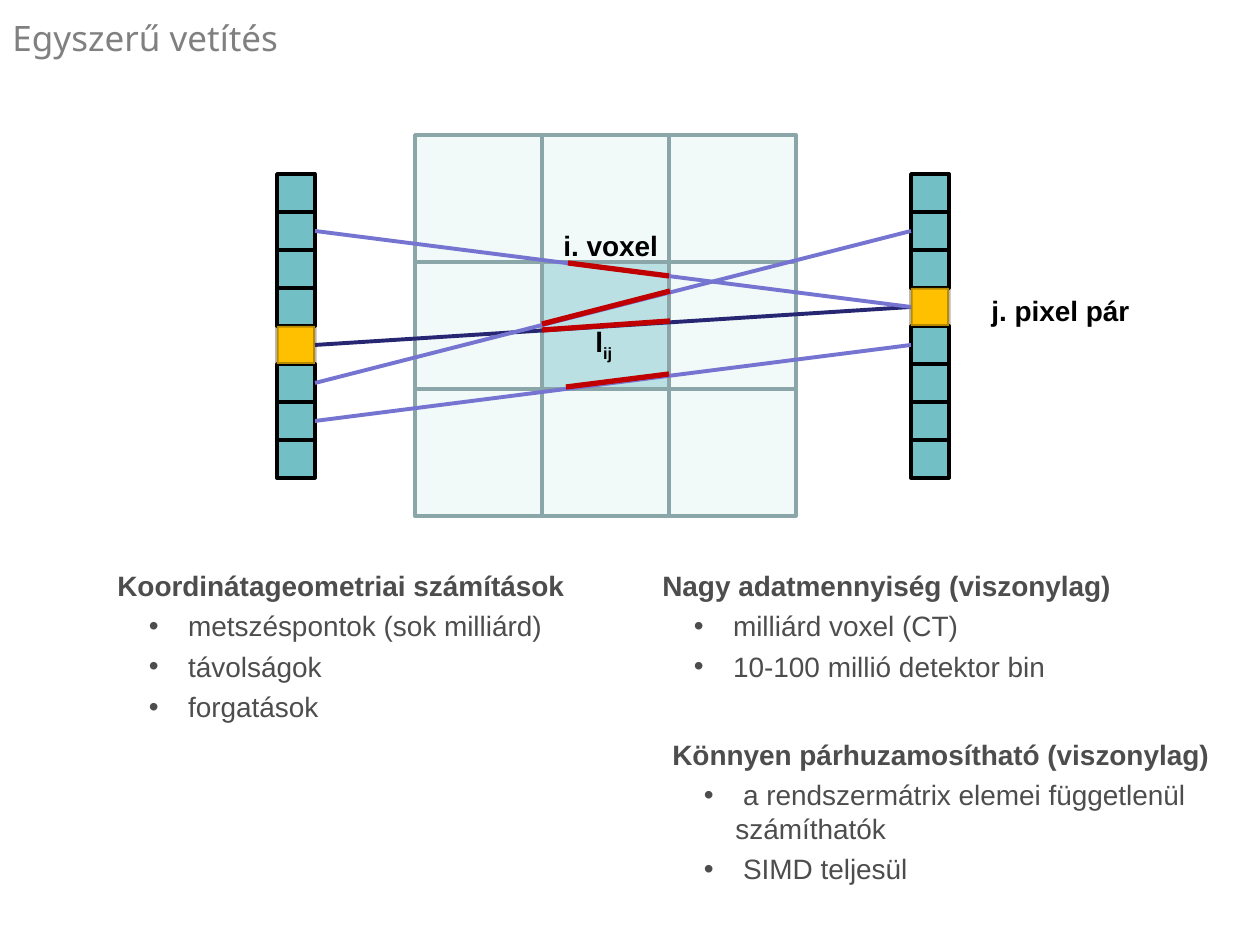
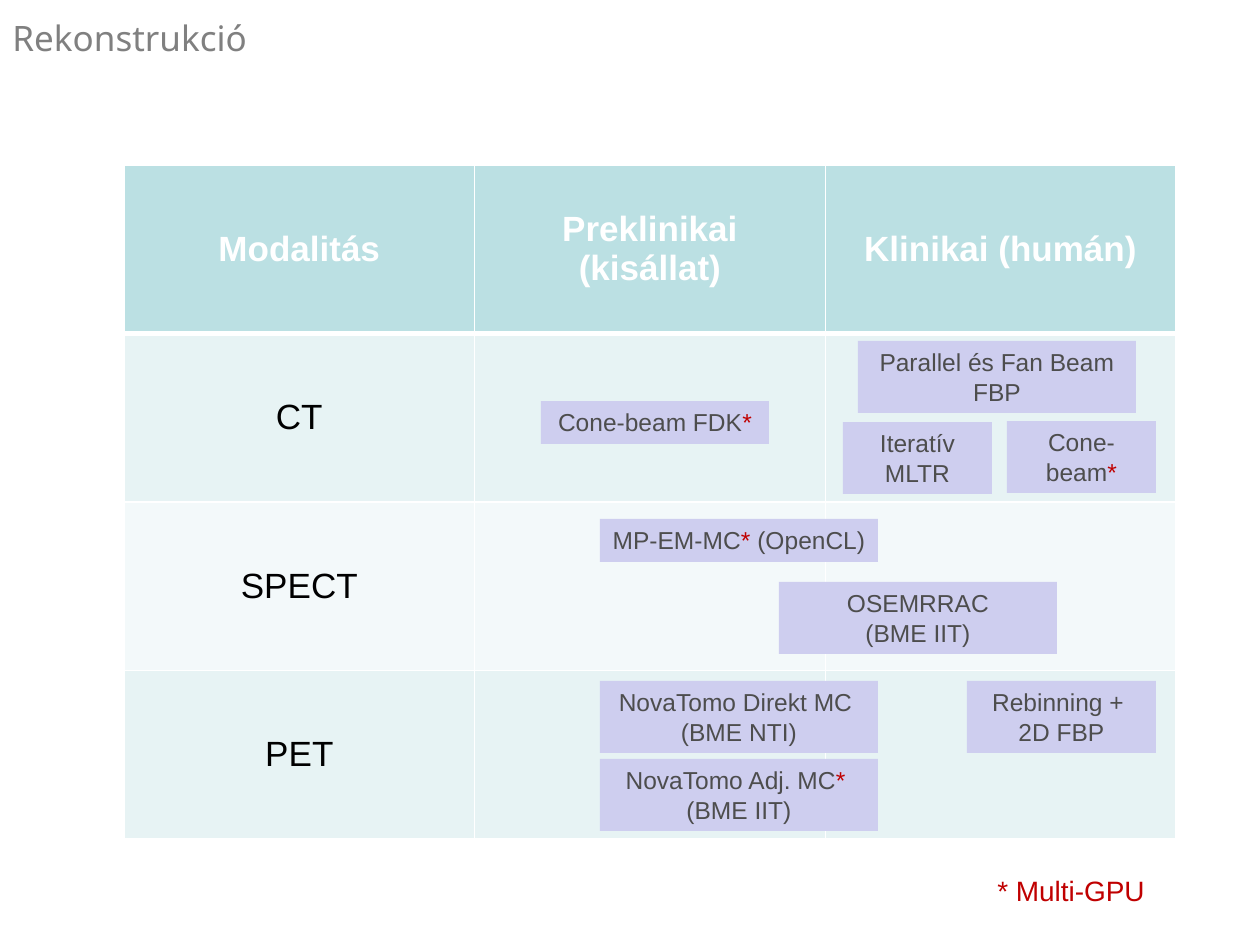
from lxml.etree import SubElement
from pptx import Presentation
from pptx.dml.color import RGBColor
from pptx.enum.shapes import MSO_CONNECTOR as Connector, MSO_SHAPE as Preset
from pptx.enum.text import MSO_ANCHOR as Anchor, MSO_AUTO_SIZE as AutoSize, PP_ALIGN as Align
from pptx.oxml.ns import qn
from pptx.util import Emu, Pt

COLORS = {
    "title": "808080", "text": "4D4D4D", "black": "000000", "white": "FFFFFF",
    "accent": "C00000", "chip": "CECEEF",
    "voxel": "F1F9F9", "active voxel": "BBE0E3", "voxel edge": "8AA6A8",
    "pixel": "72BFC5", "active pixel": "FFC000",
    "ray": "7575D1", "active ray": "262673",
    "header": "BBE0E3", "odd row": "E7F3F4", "even row": "F3F9FA",
}
FORMATS = {
    "title": {"name": "Noto Sans", "size": Pt(20)},
    "label": {"name": "Arial", "size": Pt(16), "bold": True},
    "body": {"name": "Arial", "size": Pt(16), "bold": False},
    "chip": {"name": "Arial", "size": Pt(14)},
    "header": {"name": "Arial", "size": Pt(20), "bold": True},
    "cell": {"name": "Arial", "size": Pt(20), "bold": False},
}
RIGHT_SIDE, LEFT_SIDE = 3, 1
VOXEL, PIXEL, PIXEL_COUNT = 127, 38, 8


def px(length):
    return Emu(round(length * 914400 / 126))


def rgb(color):
    return RGBColor.from_string(COLORS[color])


# Text
def add_span(para, text, style, color):
    span = para.add_run()
    span.text = text
    for name, value in FORMATS[style].items():
        setattr(span.font, name, value)
    span.font.color.rgb = rgb(color)
    return span


def add_starred(para, text, style, color):
    """Write text with line breaks, its stars in the accent colour."""
    for row, line in enumerate(text.split("\n")):
        if row:
            para.add_line_break()
        before, star, after = line.partition("*")
        for part, part_color in ((before, color), (star, "accent"), (after, color)):
            if part:
                add_span(para, part, style, part_color)


def add_box(page, left, top, width, height, wrap=True):
    box = page.shapes.add_textbox(px(left), px(top), px(width), px(height))
    box.text_frame.word_wrap = wrap
    return box.text_frame


def add_label(page, place, text, color="black", style="label", wrap=True):
    para = add_box(page, *place, wrap=wrap).paragraphs[0]
    add_span(para, text, style, color)
    return para


def add_bullet(para):
    para.level = 1
    props = para._p.get_or_add_pPr()
    props.set("marL", str(px(63)))
    props.set("indent", str(-px(63) // 2))
    SubElement(props, qn("a:buFont"), typeface="Arial")
    SubElement(props, qn("a:buChar"), char="•")


def add_list(page, place, heading, items):
    frame = add_box(page, *place)
    add_span(frame.paragraphs[0], heading, "label", "text")
    for item in items:
        para = frame.add_paragraph()
        para.space_before = Pt(4)
        add_bullet(para)
        add_span(para, " " + item, "body", "text")


def add_page(deck, title):
    page = deck.slides.add_slide(deck.slide_layouts[6])
    frame = add_box(page, 0, 0, 799, 76)
    frame.vertical_anchor = Anchor.MIDDLE
    add_span(frame.paragraphs[0], title, "title", "title")
    return page


# Shapes and lines
def add_rect(page, place, fill, edge=None):
    rect = page.shapes.add_shape(Preset.RECTANGLE, *map(px, place))
    rect.shadow.inherit = False
    rect.fill.solid()
    rect.fill.fore_color.rgb = rgb(fill)
    if edge:
        rect.line.color.rgb = rgb(edge)
        rect.line.width = Pt(2)
    else:
        rect.line.fill.background()
    return rect


def add_line(page, start, end, color, width):
    line = page.shapes.add_connector(Connector.STRAIGHT, *map(px, (*start, *end)))
    line.line.color.rgb = rgb(color)
    line.line.width = Pt(width)
    SubElement(line._element.spPr, qn("a:effectLst"))
    return line


def add_voxels(page, left, top):
    for row in range(3):
        for column in range(3):
            fill = "active voxel" if row == column == 1 else "voxel"
            place = (left + column * VOXEL, top + row * VOXEL, VOXEL, VOXEL)
            add_rect(page, place, fill, "voxel edge")


def add_detector(page, left, top, active):
    """Stack the pixels, with the active one on top of its neighbours."""
    pixels = {}
    for index in sorted(range(PIXEL_COUNT), key=lambda number: number == active):
        fill = "active pixel" if index == active else "pixel"
        place = (left, top + index * PIXEL, PIXEL, PIXEL)
        pixels[index] = add_rect(page, place, fill, "black")
    edge = pixels[active].line._get_or_add_ln().find(".//" + qn("a:srgbClr"))
    SubElement(edge, qn("a:alpha"), val="28000")
    return pixels


def add_ray(page, source, target, color):
    ray = add_line(page, (0, 0), (1, 1), color, 2.25)
    ray.begin_connect(source, RIGHT_SIDE)
    ray.end_connect(target, LEFT_SIDE)


def add_chip(page, place, text):
    chip = add_rect(page, place, "chip")
    frame = chip.text_frame
    frame.word_wrap = True
    frame.auto_size = AutoSize.SHAPE_TO_FIT_TEXT
    frame.vertical_anchor = Anchor.TOP
    para = frame.paragraphs[0]
    para.alignment = Align.CENTER
    add_starred(para, text, "chip", "text")


# Table
def set_borders(cell, row):
    props = cell._tc.get_or_add_tcPr()
    widths = {"lnL": 1, "lnR": 1, "lnT": 3 if row == 1 else 1, "lnB": 3 if row == 0 else 1}
    for side, width in widths.items():
        border = SubElement(props, qn("a:" + side), w=str(Pt(width)))
        fill = SubElement(border, qn("a:solidFill"))
        SubElement(fill, qn("a:srgbClr"), val=COLORS["white"])


def add_grid(page, place, rows):
    table = page.shapes.add_table(len(rows), len(rows[0]), *map(px, place)).table
    for row, texts in enumerate(rows):
        style, color = ("cell", "black") if row else ("header", "white")
        fill = "header" if row == 0 else "odd row" if row % 2 else "even row"
        for column, text in enumerate(texts):
            cell = table.cell(row, column)
            set_borders(cell, row)
            cell.fill.solid()
            cell.fill.fore_color.rgb = rgb(fill)
            cell.vertical_anchor = Anchor.MIDDLE
            if text:
                para = cell.text_frame.paragraphs[0]
                para.alignment = Align.CENTER
                add_span(para, text, style, color)


# Pages
def build_projection(deck):
    page = add_page(deck, "Egyszerű vetítés")
    add_voxels(page, 415, 135)
    left_pixels = add_detector(page, 277, 174, active=4)
    right_pixels = add_detector(page, 911, 174, active=3)

    for source, target, color in ((6, 4, "ray"), (4, 3, "active ray"), (5, 1, "ray"), (1, 3, "ray")):
        add_ray(page, left_pixels[source], right_pixels[target], color)

    # Parts of the rays inside the active voxel
    chords = (((542, 330), (670, 321)), ((566, 387), (669, 374)),
              ((542, 324), (670, 291)), ((568, 263), (669, 276)))
    for start, end in chords:
        add_line(page, start, end, "accent", 3)

    add_label(page, (551, 222, 131, 47), "i. voxel")
    add_label(page, (979, 287, 175, 47), "j. pixel pár")
    length = add_label(page, (583, 318, 48, 47), "l")
    index = add_span(length, "ij", "label", "black")
    index._r.get_or_add_rPr().set("baseline", "-25000")

    add_list(page, (105, 562, 507, 169), "Koordinátageometriai számítások",
             ("metszéspontok (sok milliárd)", "távolságok", "forgatások"))
    add_list(page, (650, 562, 507, 129), "Nagy adatmennyiség (viszonylag)",
             ("milliárd voxel (CT)", "10-100 millió detektor bin"))
    add_list(page, (660, 731, 566, 163), "Könnyen párhuzamosítható (viszonylag)",
             ("a rendszermátrix elemei függetlenül számíthatók", "SIMD teljesül"))


def build_reconstruction(deck):
    page = add_page(deck, "Rekonstrukció")
    add_grid(page, (124, 165, 1052, 674), (
        ("Modalitás", "Preklinikai (kisállat)", "Klinikai (humán)"),
        ("CT", "", ""),
        ("SPECT", "", ""),
        ("PET", "", ""),
    ))

    # Methods: left, top, width, text
    one_line, two_lines = 43, 72
    chips = (
        (600, 519, 278, one_line, "MP-EM-MC* (OpenCL)"),
        (779, 582, 278, two_lines, "OSEMRRAC\n(BME IIT)"),
        (600, 759, 278, two_lines, "NovaTomo Adj. MC* \n(BME IIT)"),
        (858, 341, 278, two_lines, "Parallel és Fan Beam FBP"),
        (967, 681, 189, two_lines, "Rebinning + \n2D FBP"),
        (843, 422, 149, two_lines, "Iteratív MLTR"),
        (1007, 421, 149, two_lines, "Cone-beam*"),
        (541, 401, 228, one_line, "Cone-beam FDK*"),
        (600, 681, 278, two_lines, "NovaTomo Direkt MC \n(BME NTI)"),
    )
    for *place, text in chips:
        add_chip(page, place, text)
    add_label(page, (985, 867, 175, 47), "* Multi-GPU", "accent", "body", wrap=False)


def main():
    deck = Presentation()
    deck.slide_width, deck.slide_height = px(1260), px(945)
    build_projection(deck)
    build_reconstruction(deck)
    deck.save("out.pptx")


if __name__ == "__main__":
    main()
